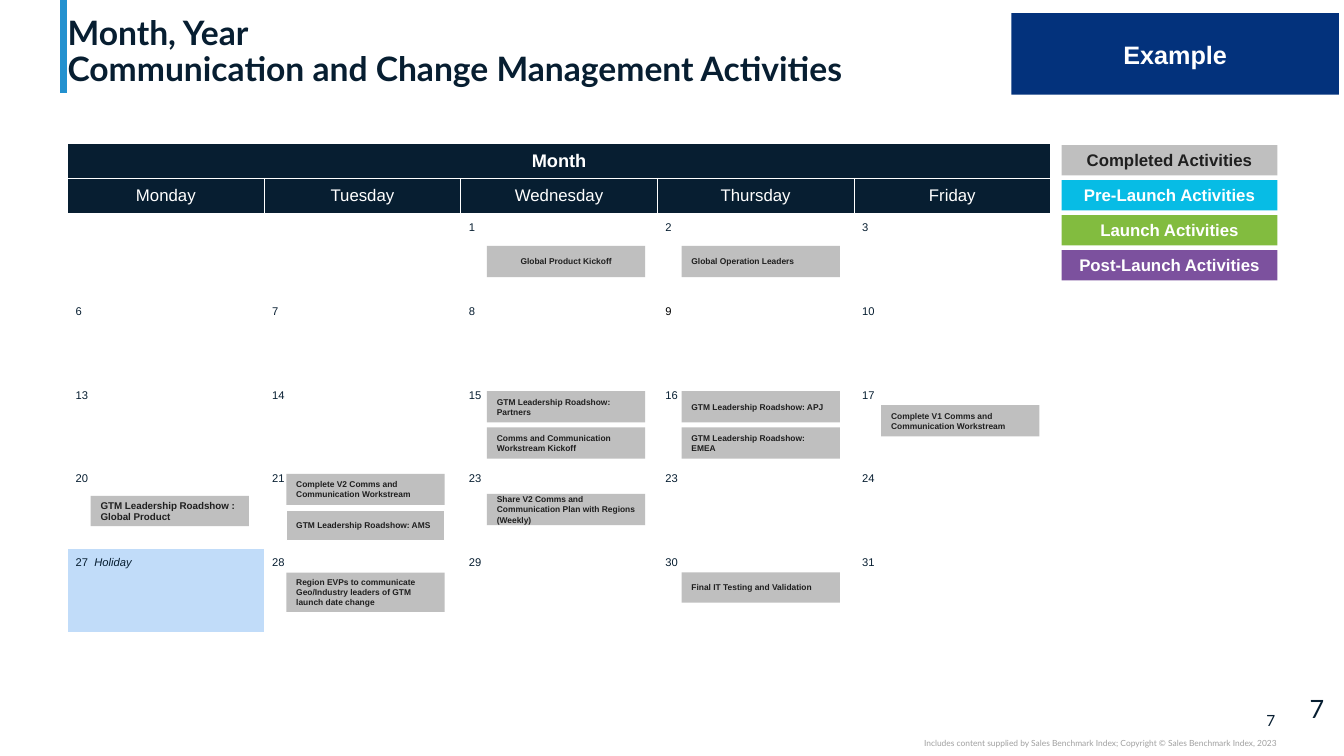
"""Build a monthly calendar slide of communication and change management activities."""
import pptx
import pptx.util
import pptx.dml.color
import pptx.enum.shapes
import pptx.enum.text
import pptx.oxml
import pptx.oxml.ns

Inches = pptx.util.Inches
Pt = pptx.util.Pt
RGBColor = pptx.dml.color.RGBColor
ALIGN = pptx.enum.text.PP_ALIGN
ANCHOR = pptx.enum.text.MSO_ANCHOR
RECT = pptx.enum.shapes.MSO_SHAPE.RECTANGLE

NAVY = RGBColor(0x07, 0x1E, 0x31)
BLUE = RGBColor(0x23, 0x91, 0xCF)
ROYAL = RGBColor(0x03, 0x32, 0x7C)
CYAN = RGBColor(0x07, 0xBC, 0xE5)
GREEN = RGBColor(0x82, 0xBC, 0x3F)
PURPLE = RGBColor(0x7C, 0x51, 0x9E)
GREY = RGBColor(0xBF, 0xBF, 0xBF)
PALE = RGBColor(0xC1, 0xDC, 0xF9)
CREDIT = RGBColor(0xA0, 0xA0, 0xA0)
INK = RGBColor(0x1F, 0x1F, 0x1F)
BLACK = RGBColor(0, 0, 0)
WHITE = RGBColor(0xFF, 0xFF, 0xFF)


def write(tf, text, size, color, align=ALIGN.LEFT, bold=False, font="Arial"):
    p = tf.paragraphs[0]
    p.text = text
    p.alignment = align
    for r in p.runs:
        for name, value in {"size": Pt(size), "bold": bold, "name": font}.items():
            setattr(r.font, name, value)
        r.font.color.rgb = color
    return p


def frame(target, anchor, left, top, right, bottom):
    target.vertical_anchor = anchor
    margins = {"left": left, "top": top, "right": right, "bottom": bottom}
    for side, value in margins.items():
        setattr(target, f"margin_{side}", Inches(value))


prs = pptx.Presentation()
prs.slide_width = Inches(13.33)
prs.slide_height = Inches(7.5)
s = prs.slides.add_slide(prs.slide_layouts[5])

bar = s.shapes.add_connector(
    pptx.enum.shapes.MSO_CONNECTOR.STRAIGHT, Inches(0.63), 0, Inches(0.63), Inches(0.92))
bar.line.color.rgb = BLUE
bar.line.width = Pt(5)
bar._element.spPr.append(pptx.oxml.parse_xml(
    f"<a:effectLst {pptx.oxml.ns.nsdecls('a')}/>"))

title = s.shapes.title
title.left, title.top, title.width, title.height = map(Inches, (0.67, 0.04, 11.99, 0.84))
tf = title.text_frame
tf.auto_size = pptx.enum.text.MSO_AUTO_SIZE.NONE
frame(tf, ANCHOR.BOTTOM, 0, 0, 0, 0)
p = write(tf, "Month, Year\vCommunication and Change Management Activities",
          24, NAVY, bold=True, font="Lato")
p.line_spacing = 0.9

footers = [
    (12.32, 7.05, 0.33, 0.19, "7", 11, NAVY, ALIGN.RIGHT, ANCHOR.MIDDLE),
    (7.5, 7.32, 5.16, 0.1,
     "Includes content supplied by Sales Benchmark Index; "
     "Copyright © Sales Benchmark Index, 2023", 6, CREDIT, ALIGN.RIGHT, ANCHOR.TOP),
    (12.99, 6.93, 0.34, 0.2, "7", 18, NAVY, ALIGN.LEFT, ANCHOR.MIDDLE),
]
for x, y, w, h, text, size, color, align, anchor in footers:
    tf = s.shapes.add_textbox(Inches(x), Inches(y), Inches(w), Inches(h)).text_frame
    tf.word_wrap = True
    frame(tf, anchor, 0, 0, 0, 0)
    write(tf, text, size, color, align, font="Lato")

rows = [
    ["Month", "", "", "", ""],
    ["Monday", "Tuesday", "Wednesday", "Thursday", "Friday"],
    ["", "", "1", "2", "3"],
    ["6", "7", "8", "9", "10"],
    ["13", "14", "15", "16", "17"],
    ["20", "21", "23", "23", "24"],
    ["27  ", "28", "29", "30", "31"],
]
table = s.shapes.add_table(
    len(rows), 5, Inches(0.67), Inches(1.42), Inches(9.75), Inches(4.83)).table
for col in table.columns:
    col.width = Inches(1.95)
for i, days in enumerate(rows):
    header = i < 2
    table.rows[i].height = Inches(0.35 if header else 0.83)
    for j, text in enumerate(days):
        cell = table.cell(i, j)
        tcPr = cell._tc.get_or_add_tcPr()
        for side in "LRTB":
            tcPr.append(pptx.oxml.parse_xml(
                f'<a:ln{side} {pptx.oxml.ns.nsdecls("a")} w="9525"><a:solidFill>'
                f'<a:srgbClr val="{WHITE}"/></a:solidFill></a:ln{side}>'))
        if header:
            frame(cell, ANCHOR.MIDDLE, 0.08, 0.04, 0.08, 0.04)
            write(cell.text_frame, text, 12 if i else 13, WHITE, ALIGN.CENTER, bold=i == 0)
        else:
            frame(cell, ANCHOR.TOP, 0.08, 0.08, 0.08, 0)
            write(cell.text_frame, text, 8, BLACK if text == "9" else NAVY)
        if header or i == len(rows) - 1:
            cell.fill.solid()
            cell.fill.fore_color.rgb = NAVY if header else WHITE
        else:
            cell.fill.background()
table.cell(0, 0).merge(table.cell(0, 4))

holiday = table.cell(6, 0)
holiday.fill.fore_color.rgb = PALE
r = holiday.text_frame.paragraphs[0].add_run()
r.text = "Holiday"
for name, value in {"size": Pt(8), "bold": False, "italic": True, "name": "Arial"}.items():
    setattr(r.font, name, value)
r.font.color.rgb = NAVY

legend = [
    ("Completed Activities", GREY, INK),
    ("Pre-Launch Activities", CYAN, WHITE),
    ("Launch Activities", GREEN, WHITE),
    ("Post-Launch Activities", PURPLE, WHITE),
]
boxes = [(10.53, 1.44 + 0.347 * i, 2.14, 0.3, text, 12, fill, color, ALIGN.CENTER, 0.03)
         for i, (text, fill, color) in enumerate(legend)]

MON, TUE, WED, THU, FRI = 0.9, 2.84, 4.83, 6.76, 8.74
activities = [
    (WED, 2.44, 0.31, "Global Product Kickoff"),
    (THU, 2.44, 0.31, "Global Operation Leaders"),
    (WED, 3.88, 0.31, "GTM Leadership Roadshow: Partners"),
    (WED, 4.24, 0.31, "Comms and Communication Workstream Kickoff"),
    (THU, 3.88, 0.31, "GTM Leadership Roadshow: APJ"),
    (THU, 4.24, 0.31, "GTM Leadership Roadshow: EMEA"),
    (FRI, 4.02, 0.31, "Complete V1 Comms and Communication Workstream"),
    (MON, 4.92, 0.3, "GTM Leadership Roadshow : Global Product"),
    (TUE, 4.7, 0.31, "Complete V2 Comms and Communication Workstream"),
    (TUE, 5.06, 0.3, "GTM Leadership Roadshow: AMS"),
    (WED, 4.9, 0.31, "Share V2 Comms and Communication Plan with Regions (Weekly)"),
    (TUE, 5.68, 0.39,
     "Region EVPs to communicate Geo/Industry leaders of GTM launch date change"),
    (THU, 5.68, 0.3, "Final IT Testing and Validation"),
]
for x, y, h, text in activities:
    align = ALIGN.CENTER if text == "Global Product Kickoff" else ALIGN.LEFT
    boxes.append((x, y, 1.57, h, text, 7 if x == MON else 6, GREY, INK, align, 0.1))
boxes.append((10.03, 0.13, 3.25, 0.81, "Example", 18, ROYAL, WHITE, ALIGN.CENTER, 0.1))

for x, y, w, h, text, size, fill, color, align, inset in boxes:
    sp = s.shapes.add_shape(RECT, Inches(x), Inches(y), Inches(w), Inches(h))
    sp.shadow.inherit = False
    sp.fill.solid()
    sp.fill.fore_color.rgb = fill
    if text.endswith("AMS"):
        sp.line.color.rgb = WHITE
        sp.line.width = Pt(0.75)
    else:
        sp.line.fill.background()
    tf = sp.text_frame
    tf.word_wrap = True
    frame(tf, ANCHOR.MIDDLE, inset, 0.05, inset, 0.05)
    write(tf, text, size, color, align, bold=True)

prs.save("out.pptx")
